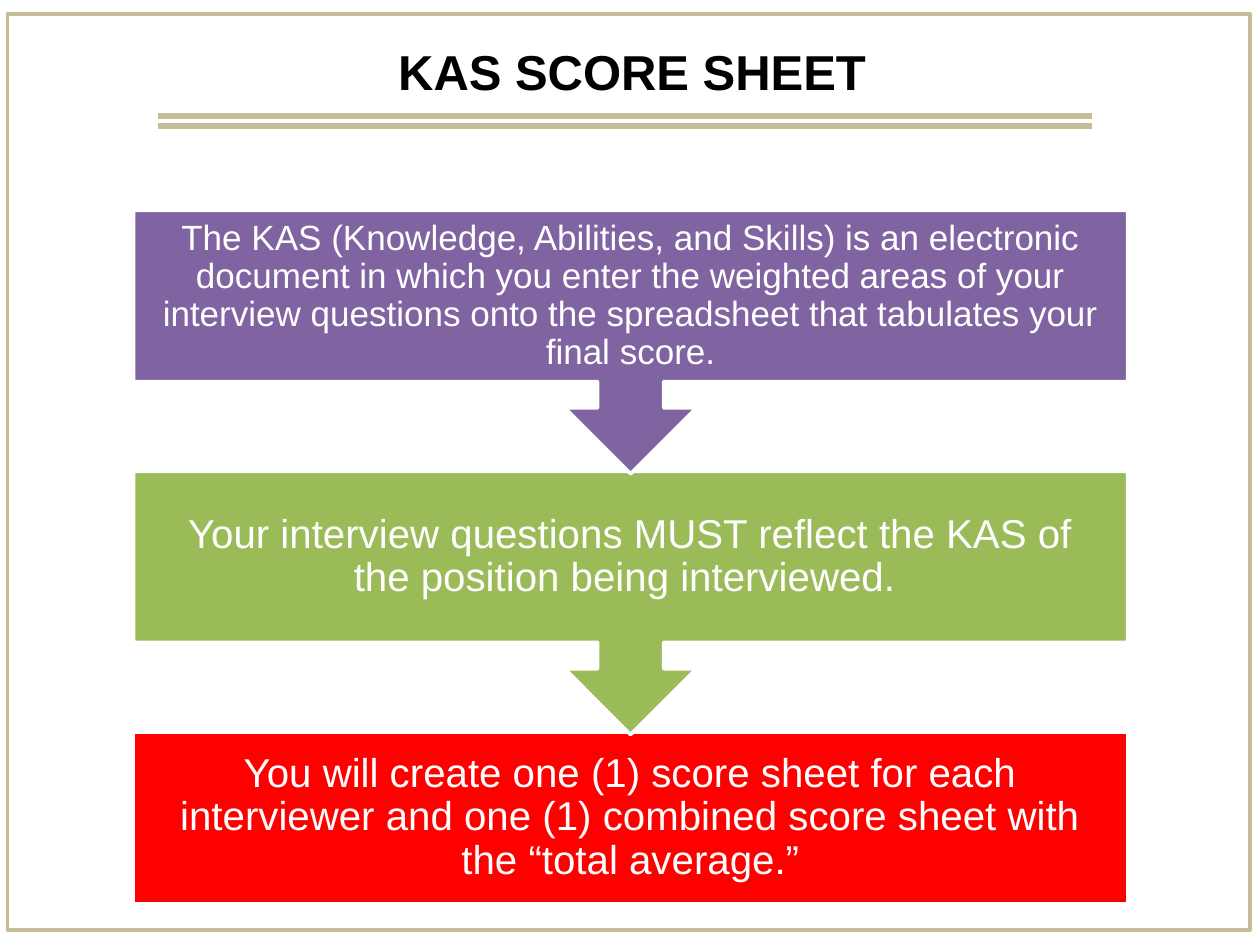
from dataclasses import dataclass

from lxml import etree
from pptx import Presentation
from pptx.dml.color import RGBColor
from pptx.enum.shapes import MSO_CONNECTOR, MSO_SHAPE
from pptx.enum.text import MSO_ANCHOR, MSO_AUTO_SIZE, PP_ALIGN
from pptx.oxml.ns import qn
from pptx.util import Inches, Pt

CENTER = PP_ALIGN.CENTER
MIDDLE = MSO_ANCHOR.MIDDLE
TOP = MSO_ANCHOR.TOP
FIT_SHAPE = MSO_AUTO_SIZE.SHAPE_TO_FIT_TEXT
RECTANGLE = MSO_SHAPE.RECTANGLE
DOWN_CALLOUT = MSO_SHAPE.DOWN_ARROW_CALLOUT
STRAIGHT = MSO_CONNECTOR.STRAIGHT
TITLE_ONLY = 5


@dataclass(frozen=True)
class Theme:
    """Colours, font and type sizes of the slide."""
    font: str = "Arial"
    tan: RGBColor = RGBColor(0xC4, 0xBD, 0x97)
    black: RGBColor = RGBColor(0, 0, 0)
    white: RGBColor = RGBColor(0xFF, 0xFF, 0xFF)
    purple: RGBColor = RGBColor(0x80, 0x64, 0xA2)
    green: RGBColor = RGBColor(0x9B, 0xBB, 0x59)
    red: RGBColor = RGBColor(0xFF, 0, 0)
    title_size: int = 28
    step_size: int = 23
    dense_size: int = 20
    rule_width: int = 3
    border_width: int = 2


THEME = Theme()

STEPS = [
    ("The KAS (Knowledge, Abilities, and Skills) is an electronic document in "
     "which you enter the weighted areas of your interview questions onto the "
     "spreadsheet that tabulates your final score.",
     THEME.purple, THEME.dense_size, 0.16),
    ("Your interview questions MUST reflect the KAS of the position being "
     "interviewed. ", THEME.green, THEME.step_size, 0.18),
    ("You will create one (1) score sheet for each interviewer and one (1) "
     "combined score sheet with the “total average.”",
     THEME.red, THEME.step_size, 0.18),
]


def write_text(frame, text, size, color, bold=False):
    """Write one centred run into a text frame."""
    frame.word_wrap = True
    paragraph = frame.paragraphs[0]
    paragraph.alignment = CENTER
    run = paragraph.add_run()
    run.text = text
    run.font.name = THEME.font
    run.font.size = Pt(size)
    run.font.bold = bold
    run.font.color.rgb = color
    return paragraph


def add_border(slide, left, top, width, height):
    """Draw the unfilled border around the slide."""
    border = slide.shapes.add_shape(
        RECTANGLE, Inches(left), Inches(top), Inches(width), Inches(height))
    border.shadow.inherit = False
    border.fill.background()
    border.line.color.rgb = THEME.tan
    border.line.width = Pt(THEME.border_width)


def add_double_rule(slide, left, top, width, gap):
    """Draw two parallel rules below the heading."""
    for y in (top, top + gap):
        rule = slide.shapes.add_connector(
            STRAIGHT, Inches(left), Inches(y), Inches(left + width), Inches(y))
        rule.line.color.rgb = THEME.tan
        rule.line.width = Pt(THEME.rule_width)
        etree.SubElement(rule._element.spPr, qn("a:effectLst"))


def set_heading(slide, left, top, width, height):
    """Place and format the title placeholder."""
    heading = slide.shapes.title
    heading.left, heading.top = Inches(left), Inches(top)
    heading.width, heading.height = Inches(width), Inches(height)
    heading.text_frame.vertical_anchor = TOP
    heading.text_frame.auto_size = FIT_SHAPE
    write_text(heading.text_frame, "KAS SCORE SHEET ", THEME.title_size,
               THEME.black, bold=True)


def add_step(slide, kind, left, top, width, height, step):
    """Add one coloured step with its text."""
    text, color, size, inset = step
    box = slide.shapes.add_shape(
        kind, Inches(left), Inches(top), Inches(width), Inches(height))
    box.shadow.inherit = False
    box.fill.solid()
    box.fill.fore_color.rgb = color
    box.line.color.rgb = THEME.white
    box.line.width = Pt(THEME.border_width)
    frame = box.text_frame
    frame.vertical_anchor = MIDDLE
    frame.margin_left = frame.margin_right = Inches(inset)
    frame.margin_top = frame.margin_bottom = Inches(inset)
    write_text(frame, text, size, THEME.white).line_spacing = 0.9


def add_process(slide, left, top, width, height):
    """Stack the steps from the bottom up so each arrow tip lies on the next."""
    last = len(STEPS) - 1
    box_height, callout_height = 1.36, 2.09
    pitch = (height - box_height) / last
    for index in range(last, -1, -1):
        kind, step_height = ((RECTANGLE, box_height) if index == last
                             else (DOWN_CALLOUT, callout_height))
        add_step(slide, kind, left, top + index * pitch, width, step_height,
                 STEPS[index])


def main():
    """Build and save the slide."""
    deck = Presentation()
    deck.slide_width, deck.slide_height = Inches(10), Inches(7.5)
    slide = deck.slides.add_slide(deck.slide_layouts[TITLE_ONLY])
    add_double_rule(slide, 1.25, 0.92, 7.42, 0.08)
    add_border(slide, 0.06, 0.11, 9.86, 7.27)
    set_heading(slide, 0.07, 0.28, 10, 0.57)
    add_process(slide, 1.06, 1.67, 7.89, 5.5)
    deck.save("out.pptx")


if __name__ == "__main__":
    main()
